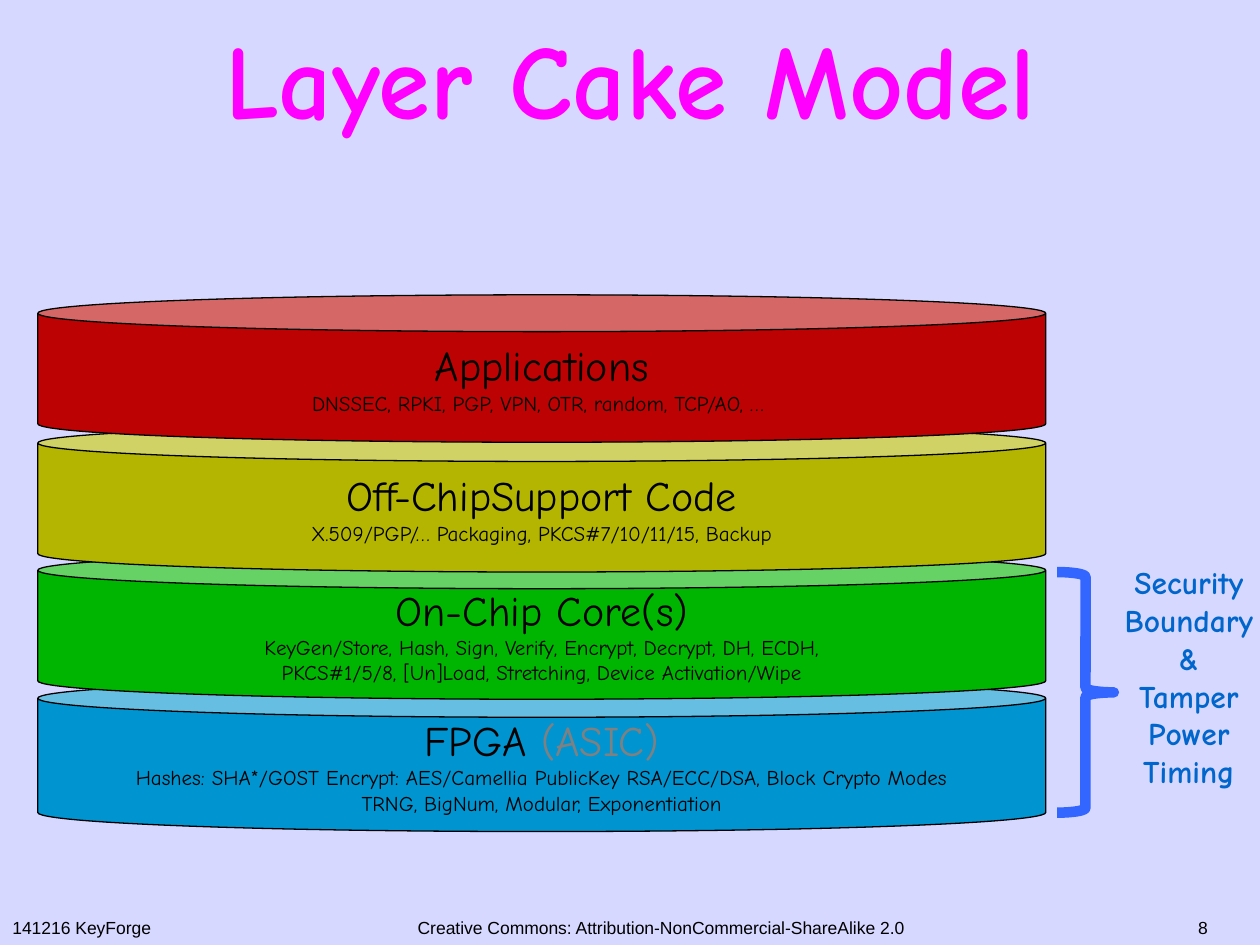
from pptx import Presentation
from pptx.dml.color import RGBColor
from pptx.enum.shapes import MSO_SHAPE
from pptx.enum.text import MSO_ANCHOR, PP_ALIGN
from pptx.util import Inches, Pt

CAN, BRACE = MSO_SHAPE.CAN, MSO_SHAPE.RIGHT_BRACE
TOP, MIDDLE = MSO_ANCHOR.TOP, MSO_ANCHOR.MIDDLE
LEFT, CENTER = PP_ALIGN.LEFT, PP_ALIGN.CENTER

COLORS = {
    "background": "D6D8FF", "title": "FF00FF", "text": "000000", "muted": "808080",
    "boundary": "0066CC", "brace": "3366FF", "fpga": "0095D0", "core": "00B501",
    "support": "B3B501", "applications": "BC0202",
}
HEADING = {"size": Pt(24), "name": "Comic Neue", "color": "text"}
MUTED = {**HEADING, "color": "muted"}
DETAIL = {**HEADING, "size": Pt(12)}
TITLE = {"size": Pt(60), "name": "Comic Neue", "bold": True, "color": "title"}
BOUNDARY = {"size": Pt(18), "name": "Comic Neue", "bold": True, "color": "boundary"}
FOOTER = {"size": Pt(10), "name": "Arial", "color": "text"}


def write_text(shape, lines, anchor=MIDDLE, alignment=CENTER, wrap=True):
    frame = shape.text_frame
    frame.word_wrap = wrap
    frame.vertical_anchor = anchor
    for index, runs in enumerate(lines):
        paragraph = frame.add_paragraph() if index else frame.paragraphs[0]
        paragraph.alignment = alignment
        for text, style in runs:
            run = paragraph.add_run()
            run.text = text
            for key, value in style.items():
                if key == "color":
                    run.font.color.rgb = RGBColor.from_string(COLORS[value])
                else:
                    setattr(run.font, key, value)
    return frame


presentation = Presentation()
presentation.slide_width, presentation.slide_height = Inches(10), Inches(7.5)
slide = presentation.slides.add_slide(presentation.slide_layouts[6])
slide.background.fill.solid()
slide.background.fill.fore_color.rgb = RGBColor.from_string(COLORS["background"])

layers = [
    ("fpga", 5.39, 1.21, [("FPGA ", HEADING), ("(ASIC)", MUTED)], [
        "Hashes: SHA*/GOST Encrypt: AES/Camellia PublicKey RSA/ECC/DSA, Block Crypto Modes",
        "TRNG, BigNum, Modular, Exponentiation"]),
    ("core", 4.38, 1.17, [("On-Chip Core(s)", HEADING)], [
        "KeyGen/Store, Hash, Sign, Verify, Encrypt, Decrypt, DH, ECDH,",
        "PKCS#1/5/8, [Un]Load, Stretching, Device Activation/Wipe"]),
    ("support", 3.37, 1.17, [("Off-ChipSupport Code", HEADING)], [
        "X.509/PGP/… Packaging, PKCS#7/10/11/15, Backup"]),
    ("applications", 2.34, 1.17, [("Applications", HEADING)], [
        "DNSSEC, RPKI, PGP, VPN, OTR, random, TCP/AO, … "]),
]
for color, top, height, heading, details in layers:
    layer = slide.shapes.add_shape(CAN, Inches(0.3), Inches(top), Inches(8), Inches(height))
    layer.shadow.inherit = False
    layer.adjustments[0] = 0.25
    layer.fill.solid()
    layer.fill.fore_color.rgb = RGBColor.from_string(COLORS[color])
    layer.line.color.rgb = RGBColor.from_string(COLORS["text"])
    layer.line.width = Pt(0.75)
    write_text(layer, [heading] + [[(detail, DETAIL)] for detail in details])

boundary = slide.shapes.add_textbox(Inches(8.79), Inches(4.42), Inches(1.29), Inches(2.19))
boundary_words = ["Security", "Boundary", "&", "Tamper", "Power", "Timing"]
write_text(boundary, [[(word, BOUNDARY)] for word in boundary_words], TOP, wrap=False)

title = slide.shapes.add_textbox(Inches(0), Inches(0), Inches(10), Inches(1.07))
title_frame = write_text(title, [[("Layer Cake Model", TITLE)]])
title_frame.paragraphs[0].line_spacing = 1.16
for side in ("left", "top", "right", "bottom"):
    setattr(title_frame, f"margin_{side}", Inches(0))

brace = slide.shapes.add_shape(BRACE, Inches(8.39), Inches(4.54), Inches(0.45), Inches(1.91))
brace.shadow.inherit = False
brace.fill.background()
brace.line.color.rgb = RGBColor.from_string(COLORS["brace"])
brace.line.width = Pt(6)

footers = [
    ("141216 KeyForge", 0, 2.36, TOP, LEFT),
    ("Creative Commons: Attribution-NonCommercial-ShareAlike 2.0", 2.36, 5.77, MIDDLE, CENTER),
    ("8", 9.41, 0.59, TOP, LEFT),
]
for text, left, width, anchor, alignment in footers:
    footer = slide.shapes.add_textbox(Inches(left), Inches(7.23), Inches(width), Inches(0.27))
    write_text(footer, [[(text, FOOTER)]], anchor, alignment)

presentation.save("out.pptx")
